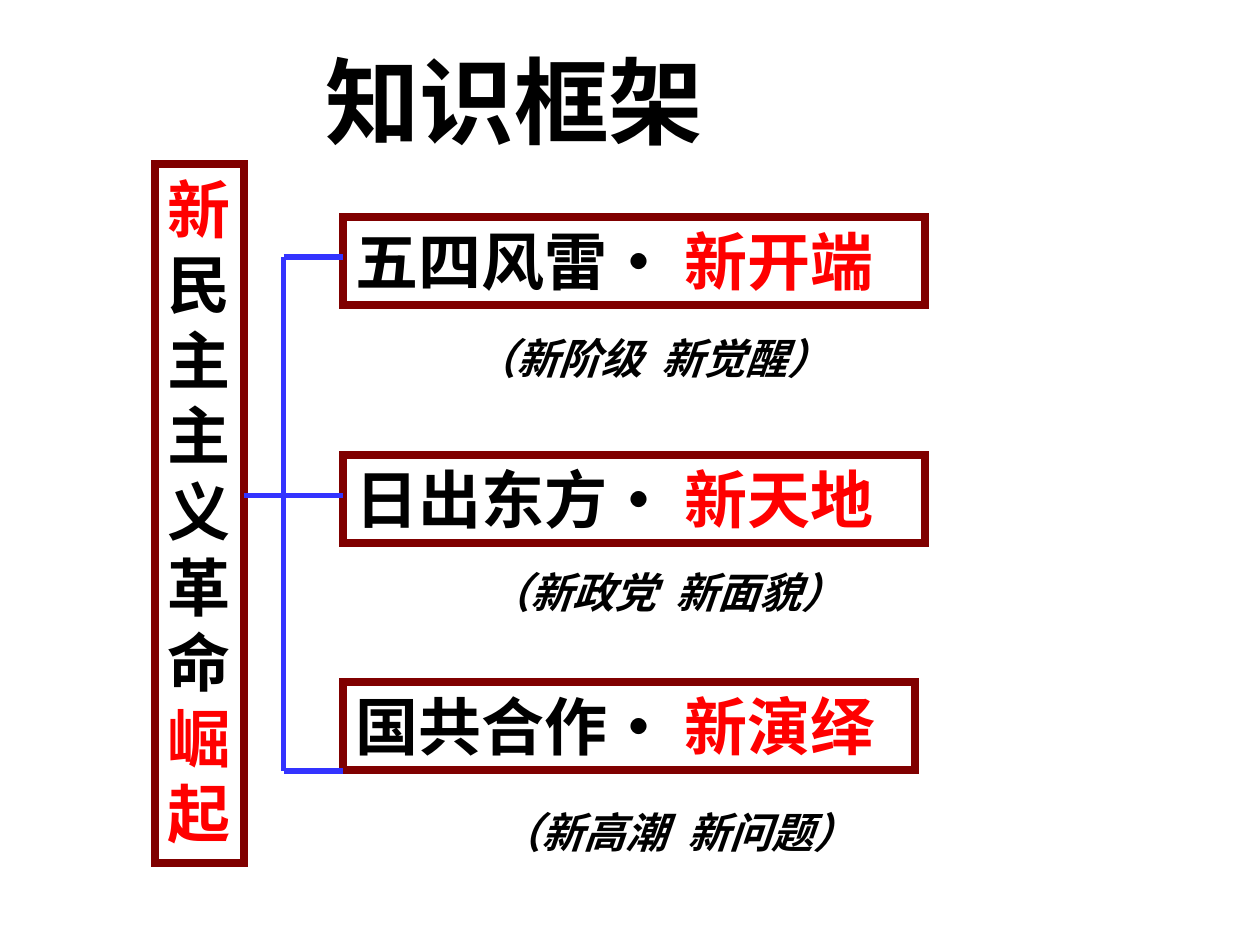
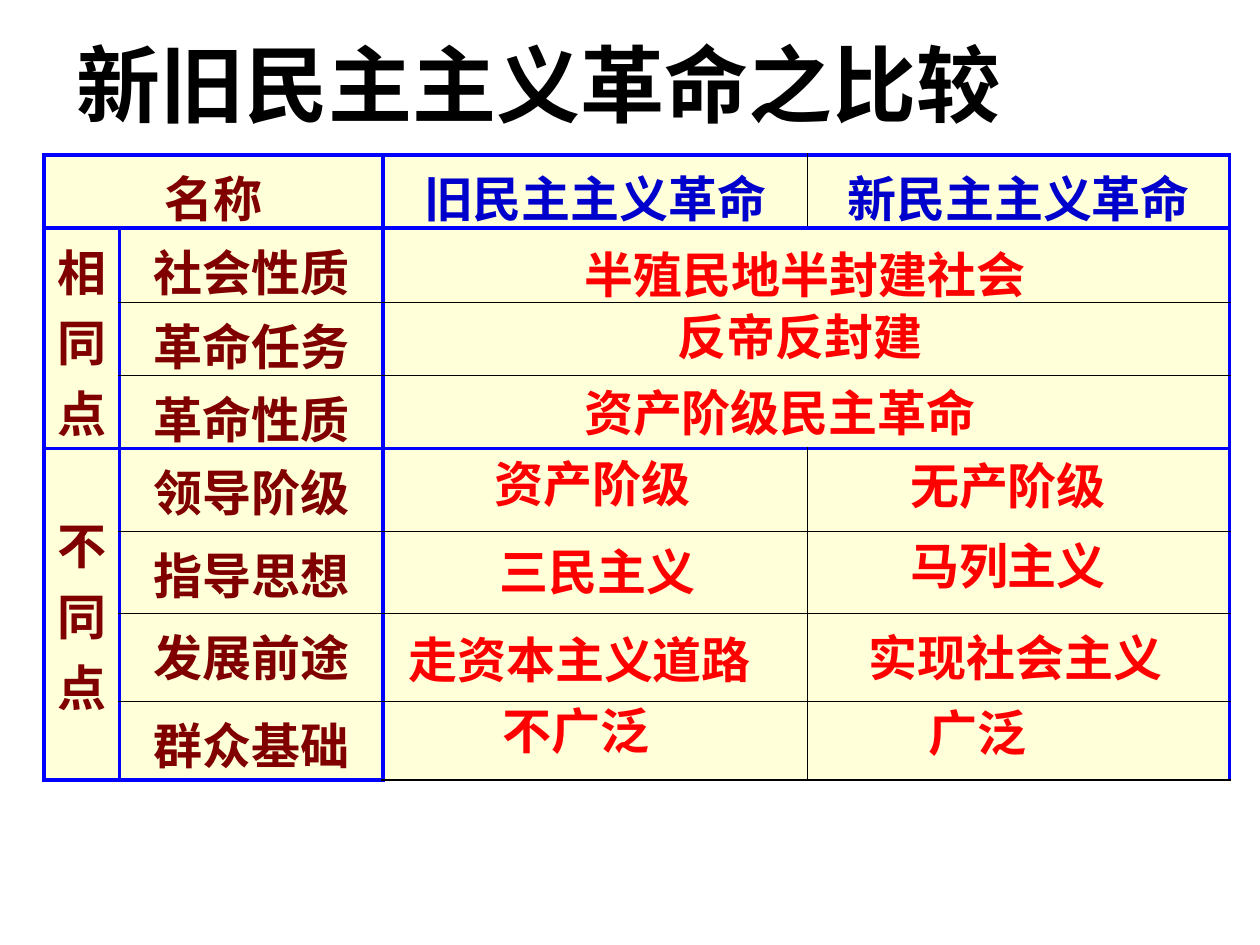
from itertools import product
from pptx import Presentation
from pptx.dml.color import RGBColor
from pptx.enum.shapes import MSO_CONNECTOR as Line, MSO_SHAPE as Shape
from pptx.enum.text import MSO_ANCHOR as Anchor, MSO_AUTO_SIZE as AutoSize, PP_ALIGN as Align
from pptx.oxml.ns import qn
from pptx.util import Inches, Pt
from lxml.etree import SubElement

# Content: framework slide
FRAME_TITLE = ("知识框架", (2.48, 0.29, 4.49, 1.01), 54)
SPINE = [("新", "red"), ("民主主义革命 ", "black"), ("崛起", "red")]
SPINE_AT = (1.23, 1.3, 0.71, 5.55)
# heading, its new aspect, box top, box width, branch height, note, note place
STAGES = [
    ("五四风雷• ", "新开端", 1.72, 4.62, 2.04, "（新阶级  新觉醒）", (3.67, 2.59)),
    ("日出东方• ", "新天地", 3.61, 4.62, 3.93, "（新政党  新面貌）", (3.78, 4.45)),
    ("国共合作• ", "新演绎", 5.41, 4.54, 6.12, "（新高潮  新问题）", (3.87, 6.35)),
]
STAGE_LEFT, TRUNK_X = 2.72, 2.25

# Content: comparison slide
COMPARE_TITLE = ("新旧民主主义革命之比较", (0.51, 0.21, 8.11, 0.91), 48)
HEADERS = ["名称", "旧民主主义革命", "新民主主义革命"]
ASPECTS = ["社会性质", "革命任务", "革命性质", "领导阶级", "指导思想", "发展前途", "群众基础"]
GROUPS = [(1, 3, ["相", "同", "点"]), (4, 7, ["不同点"])]
COLUMNS = [0.6, 2.09, 3.37, 3.35]
ROWS = [0.58, 0.59, 0.58, 0.58, 0.66, 0.65, 0.7, 0.62]
# answer, centre, top
ANSWERS = [
    ("半殖民地半封建社会", 6.39, 1.89), ("反帝反封建", 6.35, 2.38),
    ("资产阶级民主革命", 6.19, 2.99),
    ("资产阶级", 4.7, 3.55), ("无产阶级", 8.0, 3.57),
    ("三民主义", 4.74, 4.25), ("马列主义", 8.0, 4.2),
    ("走资本主义道路", 4.6, 4.95), ("实现社会主义", 8.06, 4.93),
    ("不广泛", 4.57, 5.51), ("广泛", 7.76, 5.53),
]

THEME = {
    "black": "000000", "red": "FF0000", "white": "FFFFFF", "maroon": "800000",
    "branch": "3333FF", "header": "0000CC", "grid": "0000FF", "cream": "FFFFCC",
    "cjk": "Noto Sans CJK SC", "title": "Calibri", "table": "Arial",
    "stage_size": 36, "note_size": 24, "table_size": 28,
}


def color(name):
    return RGBColor.from_string(THEME[name])


def fill_with(target, name, opacity):
    target.fill.solid()
    target.fill.fore_color.rgb = color(name)
    tint = target.fill._xPr.find(qn("a:solidFill"))[0]
    SubElement(tint, qn("a:alpha"), val=str(opacity * 1000))


def add_spans(para, spans, size, face, italic=None):
    for text, name in spans:
        span = para.add_run()
        span.text = text
        formats = {"size": Pt(size), "name": THEME[face], "bold": True, "italic": italic}
        for key, value in formats.items():
            setattr(span.font, key, value)
        span.font.color.rgb = color(name)


def set_text(shape, spans, size, face, align=Align.LEFT, italic=None, wrap=True):
    frame = shape.text_frame
    formats = {"word_wrap": wrap, "vertical_anchor": Anchor.TOP,
               "auto_size": AutoSize.SHAPE_TO_FIT_TEXT}
    for key, value in formats.items():
        setattr(frame, key, value)
    para = frame.paragraphs[0]
    para.alignment = align
    add_spans(para, spans, size, face, italic)


def add_titled_page(deck, text, place, size):
    page = deck.slides.add_slide(deck.slide_layouts[5])
    title = page.shapes.title
    for key, value in zip(("left", "top", "width", "height"), place):
        setattr(title, key, Inches(value))
    set_text(title, [(text, "black")], size, "title")
    return page


def add_text(page, place, *args, **formats):
    set_text(page.shapes.add_textbox(*map(Inches, place)), *args, **formats)


def add_framed_box(page, place, spans):
    box = page.shapes.add_shape(Shape.RECTANGLE, *map(Inches, place))
    box.shadow.inherit = False
    fill_with(box, "white", 60)
    box.line.color.rgb, box.line.width = color("maroon"), Pt(4.5)
    SubElement(box.line._get_or_add_ln(), qn("a:miter"), lim="800000")
    set_text(box, spans, THEME["stage_size"], "cjk")


def add_branch(page, *ends):
    line = page.shapes.add_connector(Line.STRAIGHT, *map(Inches, ends))
    line.line.color.rgb, line.line.width = color("branch"), Pt(3)
    SubElement(line._element.spPr, qn("a:effectLst"))


def set_borders(cell, thick_sides):
    props = cell._tc.get_or_add_tcPr()
    for place, side in enumerate("LRTB"):
        name, width = ("grid", 2.25) if side in thick_sides else ("black", 1)
        edge = props.makeelement(qn(f"a:ln{side}"), {"w": str(Pt(width))})
        SubElement(SubElement(edge, qn("a:solidFill")), qn("a:srgbClr"), val=THEME[name])
        props.insert(place, edge)


def set_cell(cell, lines, name, anchor=Anchor.TOP):
    cell.vertical_anchor = anchor
    frame = cell.text_frame
    for index, text in enumerate(lines):
        para = frame.add_paragraph() if index else frame.paragraphs[0]
        para.alignment = Align.CENTER
        para.space_before = Pt(0 if len(lines) > 1 else 5.6)
        add_spans(para, [(text, name)], THEME["table_size"], "table")


def thick_sides(row, column):
    """Thick lines frame the header, the two groups and the label columns."""
    sides = "LR" if column < 2 else "L" if column == 2 else "R"
    if row in (1, 2, 3) and column >= 2:
        sides = "LR"
    if row in (0, 1, 4) or column == 0:
        sides += "T"
    if row in (0, 3) or column == 0 or (row == 7 and column == 1):
        sides += "B"
    return sides


def build_framework(deck):
    page = add_titled_page(deck, *FRAME_TITLE)
    add_framed_box(page, SPINE_AT, SPINE)
    spine_right = SPINE_AT[0] + SPINE_AT[2]
    heights = [stage[4] for stage in STAGES]
    for heading, aspect, top, width, _, note, (left, note_top) in STAGES:
        add_framed_box(page, (STAGE_LEFT, top, width, 0.7),
                       [(heading, "black"), (aspect, "red")])
        add_text(page, (left, note_top, 3.07, 0.5), [(note, "black")],
                 THEME["note_size"], "cjk", italic=True)
    # Trunk and branches
    add_branch(page, spine_right, heights[1], TRUNK_X, heights[1])
    add_branch(page, TRUNK_X, heights[0], TRUNK_X, heights[-1])
    for height in heights:
        add_branch(page, TRUNK_X, height, STAGE_LEFT, height)


def build_comparison(deck):
    page = add_titled_page(deck, *COMPARE_TITLE)
    place = (0.35, 1.23, sum(COLUMNS), sum(ROWS))
    table = page.shapes.add_table(len(ROWS), len(COLUMNS), *map(Inches, place)).table
    table.first_row = table.horz_banding = False
    for column, width in zip(table.columns, COLUMNS):
        column.width = Inches(width)
    for row, height in zip(table.rows, ROWS):
        row.height = Inches(height)
    for row, column in product(range(len(ROWS)), range(len(COLUMNS))):
        cell = table.cell(row, column)
        fill_with(cell, "cream", 72)
        set_borders(cell, thick_sides(row, column))
    # Merged areas
    table.cell(0, 0).merge(table.cell(0, 1))
    for row in (1, 2, 3):
        table.cell(row, 2).merge(table.cell(row, 3))
    for first, last, label in GROUPS:
        table.cell(first, 0).merge(table.cell(last, 0))
        set_cell(table.cell(first, 0), label, "maroon", Anchor.MIDDLE)
    # Labels
    set_cell(table.cell(0, 0), HEADERS[:1], "maroon", Anchor.MIDDLE)
    for column, header in enumerate(HEADERS[1:], 2):
        set_cell(table.cell(0, column), [header], "header")
    for row, aspect in enumerate(ASPECTS, 1):
        set_cell(table.cell(row, 1), [aspect], "maroon")
    # Answers laid over the cells
    for answer, centre, top in ANSWERS:
        width = 0.2 + len(answer) * THEME["table_size"] / 72
        add_text(page, (centre - width / 2, top, width, 0.57), [(answer, "red")],
                 THEME["table_size"], "title", align=Align.CENTER, wrap=False)


def main():
    deck = Presentation()
    deck.slide_width, deck.slide_height = Inches(10), Inches(7.5)
    build_framework(deck)
    build_comparison(deck)
    deck.save("out.pptx")


if __name__ == "__main__":
    main()
